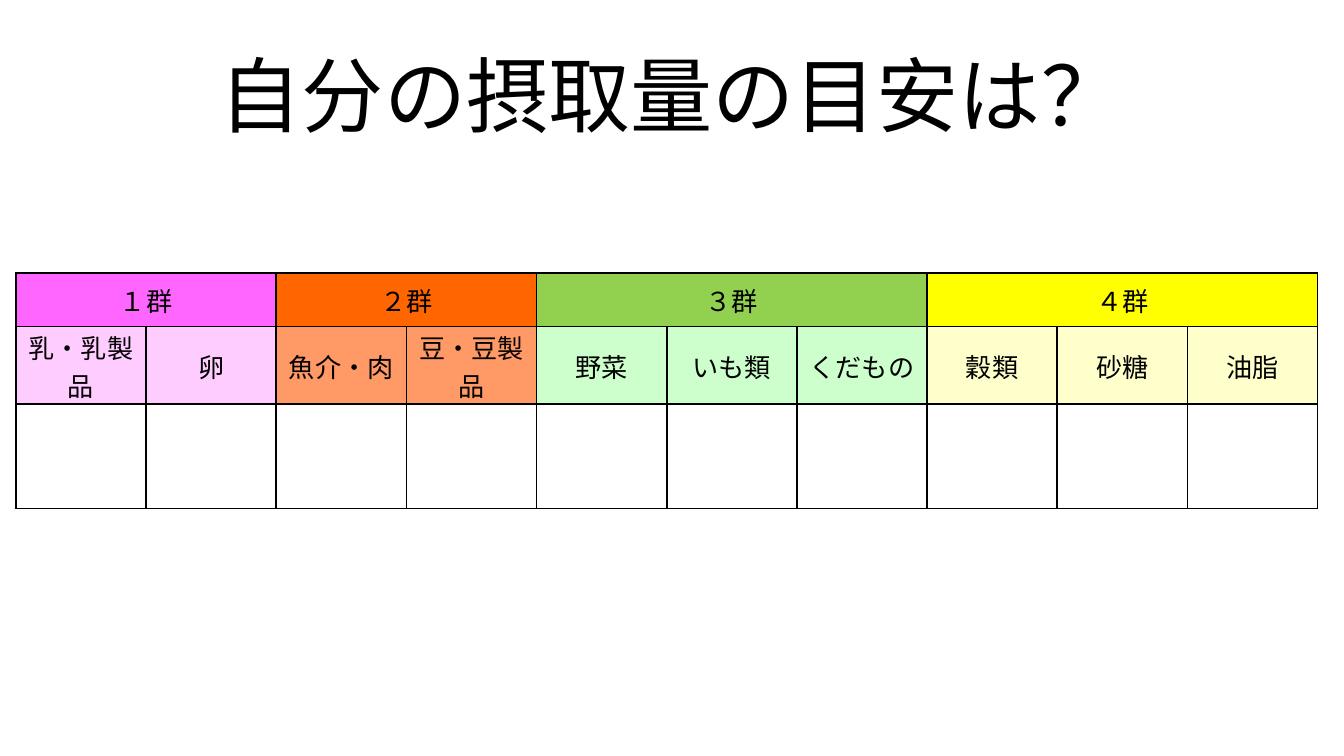
from lxml.etree import SubElement
from pptx import Presentation
from pptx.dml.color import RGBColor
from pptx.enum.text import MSO_ANCHOR as Anchor, PP_ALIGN as Align
from pptx.oxml.ns import qn
from pptx.util import Cm, Pt

FONT = "Calibri"
BLACK = RGBColor(0, 0, 0)
PINK = RGBColor(0xFF, 0x66, 0xFF)
PALE_PINK = RGBColor(0xFF, 0xCC, 0xFF)
ORANGE = RGBColor(0xFF, 0x66, 0x00)
PALE_ORANGE = RGBColor(0xFF, 0x99, 0x66)
GREEN = RGBColor(0x92, 0xD0, 0x50)
PALE_GREEN = RGBColor(0xCC, 0xFF, 0xCC)
YELLOW = RGBColor(0xFF, 0xFF, 0x00)
PALE_YELLOW = RGBColor(0xFF, 0xFF, 0xCC)

FOOD_GROUPS = [
    ("１群", PINK, PALE_PINK, ["乳・乳製品", "卵"]),
    ("２群", ORANGE, PALE_ORANGE, ["魚介・肉", "豆・豆製品"]),
    ("３群", GREEN, PALE_GREEN, ["野菜", "いも類", "くだもの"]),
    ("４群", YELLOW, PALE_YELLOW, ["穀類", "砂糖", "油脂"]),
]
COLUMN_WIDTH = Cm(2.46)
ROW_HEIGHTS = [Cm(1.01), Cm(1.01), Cm(1.98)]


def write_text(frame, text, size):
    frame.text = text
    paragraph = frame.paragraphs[0]
    paragraph.alignment = Align.CENTER
    font = paragraph.runs[0].font
    font.name = FONT
    font.size = Pt(size)
    font.bold = False
    font.color.rgb = BLACK


def add_title(slide, text):
    title = slide.shapes.title
    title.left, title.top = Cm(1.27), Cm(0.58)
    title.width, title.height = Cm(22.86), Cm(2.39)
    write_text(title.text_frame, text, 44)
    title.text_frame.vertical_anchor = Anchor.MIDDLE


def add_borders(cell):
    properties = cell._tc.get_or_add_tcPr()
    for position, side in enumerate(("lnL", "lnR", "lnT", "lnB")):
        border = SubElement(properties, qn(f"a:{side}"), w=str(Pt(1)))
        fill = SubElement(border, qn("a:solidFill"))
        SubElement(fill, qn("a:srgbClr"), val=str(BLACK))
        properties.insert(position, border)


def fill_cell(cell, text, color):
    cell.fill.solid()
    cell.fill.fore_color.rgb = color
    cell.margin_left = cell.margin_right = cell.margin_top = Cm(0.02)
    cell.margin_bottom = 0
    cell.vertical_anchor = Anchor.MIDDLE
    write_text(cell.text_frame, text, 14)


def add_intake_table(slide):
    column_count = sum(len(foods) for *_, foods in FOOD_GROUPS)
    table = slide.shapes.add_table(
        len(ROW_HEIGHTS), column_count, Cm(0.3), Cm(5.16),
        COLUMN_WIDTH * column_count, sum(ROW_HEIGHTS)).table
    table.first_row = table.horz_banding = False
    for column in table.columns:
        column.width = COLUMN_WIDTH
    for row, height in zip(table.rows, ROW_HEIGHTS):
        row.height = height
    for cell in table.iter_cells():
        cell.fill.background()
        add_borders(cell)

    start = 0
    for group, color, pale_color, foods in FOOD_GROUPS:
        end = start + len(foods)
        table.cell(0, start).merge(table.cell(0, end - 1))
        fill_cell(table.cell(0, start), group, color)
        for column, food in enumerate(foods, start):
            fill_cell(table.cell(1, column), food, pale_color)
        start = end


def main():
    presentation = Presentation()
    presentation.slide_width = Cm(25.4)
    presentation.slide_height = Cm(14.29)
    slide = presentation.slides.add_slide(presentation.slide_layouts[5])
    add_title(slide, "自分の摂取量の目安は？")
    add_intake_table(slide)
    presentation.save("out.pptx")


if __name__ == "__main__":
    main()
